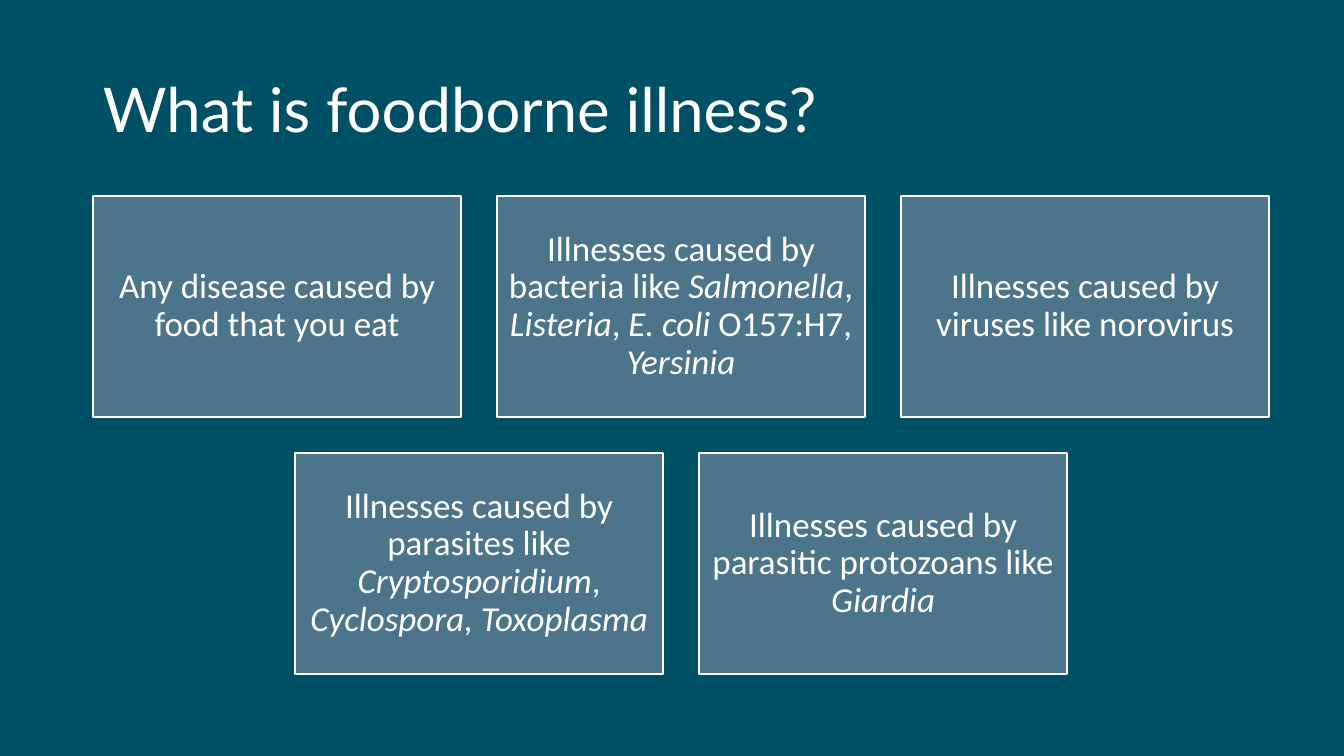
from pptx import Presentation
from pptx.dml.color import RGBColor
from pptx.enum.shapes import MSO_SHAPE
from pptx.enum.text import MSO_ANCHOR, PP_ALIGN
from pptx.util import Pt

RECTANGLE = MSO_SHAPE.RECTANGLE
MIDDLE = MSO_ANCHOR.MIDDLE
LEFT, CENTER = PP_ALIGN.LEFT, PP_ALIGN.CENTER

TITLE = "What is foodborne illness?"

# Each card is a list of runs; runs alternate between upright and italic.
CARD_ROWS = [
    [
        ["Any disease caused by food that you eat"],
        ["Illnesses caused by bacteria like ", "Salmonella", ", ", "Listeria", ", ",
         "E. coli ", "O157:H7, ", "Yersinia"],
        ["Illnesses caused by viruses like norovirus"],
    ],
    [
        ["Illnesses caused by parasites like ", "Cryptosporidium", ", ",
         "Cyclospora, Toxoplasma"],
        ["Illnesses caused by parasitic protozoans like ", "Giardia"],
    ],
]

COLORS = {"background": "005065", "card": "4C748B", "white": "FFFFFF"}
TITLE_FONT = {"name": "Lato", "size": Pt(44)}
CARD_FONT = {"name": "Calibri", "size": Pt(25)}

SLIDE_W, SLIDE_H = 1344, 756
TITLE_BOX = (93, 40, 962, 146)
CARD_W, CARD_H, GAP = 368, 221, 36
CARDS_CENTER, CARDS_TOP = 681, 196
CARD_INSET = 10


def px(length):
    return round(length * 914400 / 100.8)


def color(key):
    return RGBColor.from_string(COLORS[key])


def write(frame, runs, font, align):
    """Fill a frame with one paragraph whose odd-numbered runs are italic."""
    frame.word_wrap = True
    frame.vertical_anchor = MIDDLE
    paragraph = frame.paragraphs[0]
    paragraph.alignment = align
    paragraph.line_spacing = 0.9
    for index, words in enumerate(runs):
        run = paragraph.add_run()
        run.text = words
        run.font.italic = index % 2 == 1
        run.font.color.rgb = color("white")
        for attribute, value in font.items():
            setattr(run.font, attribute, value)


def add_card(slide, left, top, runs):
    card = slide.shapes.add_shape(RECTANGLE, *map(px, (left, top, CARD_W, CARD_H)))
    card.shadow.inherit = False
    card.fill.solid()
    card.fill.fore_color.rgb = color("card")
    card.line.color.rgb = color("white")
    card.line.width = Pt(1.5)
    for side in ("left", "top", "right", "bottom"):
        setattr(card.text_frame, f"margin_{side}", px(CARD_INSET))
    write(card.text_frame, runs, CARD_FONT, CENTER)


def main():
    deck = Presentation()
    deck.slide_width, deck.slide_height = px(SLIDE_W), px(SLIDE_H)
    slide = deck.slides.add_slide(deck.slide_layouts[6])
    slide.background.fill.solid()
    slide.background.fill.fore_color.rgb = color("background")

    title = slide.shapes.add_textbox(*map(px, TITLE_BOX))
    write(title.text_frame, [TITLE], TITLE_FONT, LEFT)

    for row, cards in enumerate(CARD_ROWS):
        row_width = len(cards) * (CARD_W + GAP) - GAP
        row_left = CARDS_CENTER - row_width / 2
        top = CARDS_TOP + row * (CARD_H + GAP)
        for column, runs in enumerate(cards):
            add_card(slide, row_left + column * (CARD_W + GAP), top, runs)

    deck.save("out.pptx")


if __name__ == "__main__":
    main()
